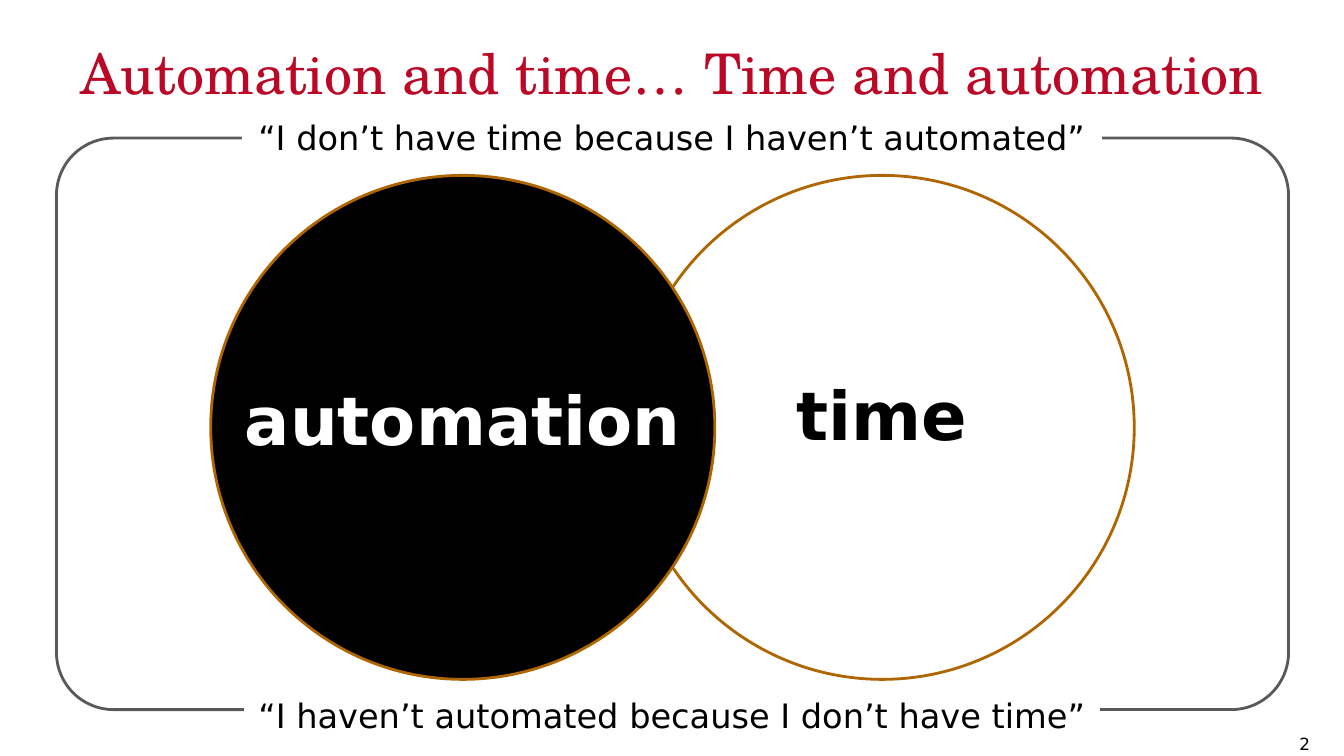
from dataclasses import dataclass
from typing import Optional

from pptx import Presentation
from pptx import util as u
from pptx.dml.color import RGBColor
from pptx.enum import shapes, text

BLACK = RGBColor(0x00, 0x00, 0x00)
WHITE = RGBColor(0xFF, 0xFF, 0xFF)
GRAY = RGBColor(0x59, 0x59, 0x59)
ORANGE = RGBColor(0xAF, 0x65, 0x00)
RED = RGBColor(0xBB, 0x08, 0x26)

SANS = "DejaVu Sans"
SERIF = "TeX Gyre Schola"

CIRCLE_TOP = 1.74
CIRCLE_SIZE = 5
LABEL_OVERHANG = 0.3
LABEL_HEIGHT = 0.99


@dataclass
class Area:
    left: float
    top: float
    width: float
    height: float

    def lengths(self) -> list[u.Length]:
        return [u.Inches(v) for v in (self.left, self.top, self.width, self.height)]


@dataclass
class Style:
    size: float
    color: RGBColor
    font: str = SANS
    bold: bool = False
    align: text.PP_ALIGN = text.PP_ALIGN.CENTER
    line_spacing: float = 1.0


@dataclass
class Quote:
    wording: str
    area: Area


@dataclass
class Circle:
    word: str
    left: float
    label_top: float
    fill: RGBColor
    word_color: RGBColor


QUOTES = [
    Quote("“I don’t have time because I haven’t automated”", Area(2.4, 1.11, 8.53, 0.4)),
    Quote("“I haven’t automated because I don’t have time”", Area(2.42, 6.84, 8.49, 0.4)),
]
CIRCLES = [
    Circle("time", 6.25, 3.66, WHITE, BLACK),
    Circle("automation", 2.09, 3.71, BLACK, WHITE),
]


def write(box, wording: str, style: Style, anchor=text.MSO_ANCHOR.TOP) -> None:
    frame = box.text_frame
    frame.text = wording
    frame.word_wrap = True
    frame.vertical_anchor = anchor
    para = frame.paragraphs[0]
    para.alignment = style.align
    para.line_spacing = style.line_spacing
    font = para.runs[0].font
    font.name = style.font
    font.size = u.Pt(style.size)
    font.bold = style.bold
    font.color.rgb = style.color


def add_text(page, area: Area, wording: str, style: Style,
             anchor=text.MSO_ANCHOR.TOP, inset: Optional[float] = 0) -> None:
    """Add a text box; an inset of None keeps the default margins."""
    box = page.shapes.add_textbox(*area.lengths())
    write(box, wording, style, anchor)
    if inset is not None:
        frame = box.text_frame
        frame.margin_left = frame.margin_right = u.Inches(inset)
        frame.margin_top = frame.margin_bottom = u.Inches(inset)


def add_shape(page, kind: shapes.MSO_SHAPE, area: Area,
              fill: Optional[RGBColor] = None, line: Optional[RGBColor] = None):
    shape = page.shapes.add_shape(kind, *area.lengths())
    shape.shadow.inherit = False
    if fill is None:
        shape.fill.background()
    else:
        shape.fill.solid()
        shape.fill.fore_color.rgb = fill
    if line is None:
        shape.line.fill.background()
    else:
        shape.line.color.rgb = line
        shape.line.width = u.Pt(2)
    return shape


def add_circle(page, circle: Circle) -> None:
    area = Area(circle.left, CIRCLE_TOP, CIRCLE_SIZE, CIRCLE_SIZE)
    add_shape(page, shapes.MSO_SHAPE.OVAL, area, circle.fill, ORANGE)
    label = Area(circle.left - LABEL_OVERHANG, circle.label_top,
                 CIRCLE_SIZE + 2 * LABEL_OVERHANG, LABEL_HEIGHT)
    style = Style(48, circle.word_color, bold=True, line_spacing=0.9)
    add_text(page, label, circle.word, style, text.MSO_ANCHOR.MIDDLE)


def main() -> None:
    deck = Presentation()
    deck.slide_width = u.Inches(13.33)
    deck.slide_height = u.Inches(7.5)
    page = deck.slides.add_slide(deck.slide_layouts[6])

    add_text(page, Area(12.79, 7.23, 0.5, 0.27), "2",
             Style(12, BLACK, align=text.PP_ALIGN.LEFT), inset=None)

    loop = add_shape(page, shapes.MSO_SHAPE.ROUNDED_RECTANGLE,
                     Area(0.56, 1.37, 12.22, 5.67), line=GRAY)
    loop.adjustments[0] = 0.1

    for quote in QUOTES:
        banner = add_shape(page, shapes.MSO_SHAPE.RECTANGLE, quote.area, WHITE)
        write(banner, quote.wording, Style(24, BLACK))

    for circle in CIRCLES:
        add_circle(page, circle)

    add_text(page, Area(0.8, 0.35, 12, 1.25), "Automation and time… Time and automation",
             Style(40, RED, SERIF, align=text.PP_ALIGN.LEFT, line_spacing=1.05))

    deck.save("out.pptx")


if __name__ == "__main__":
    main()
